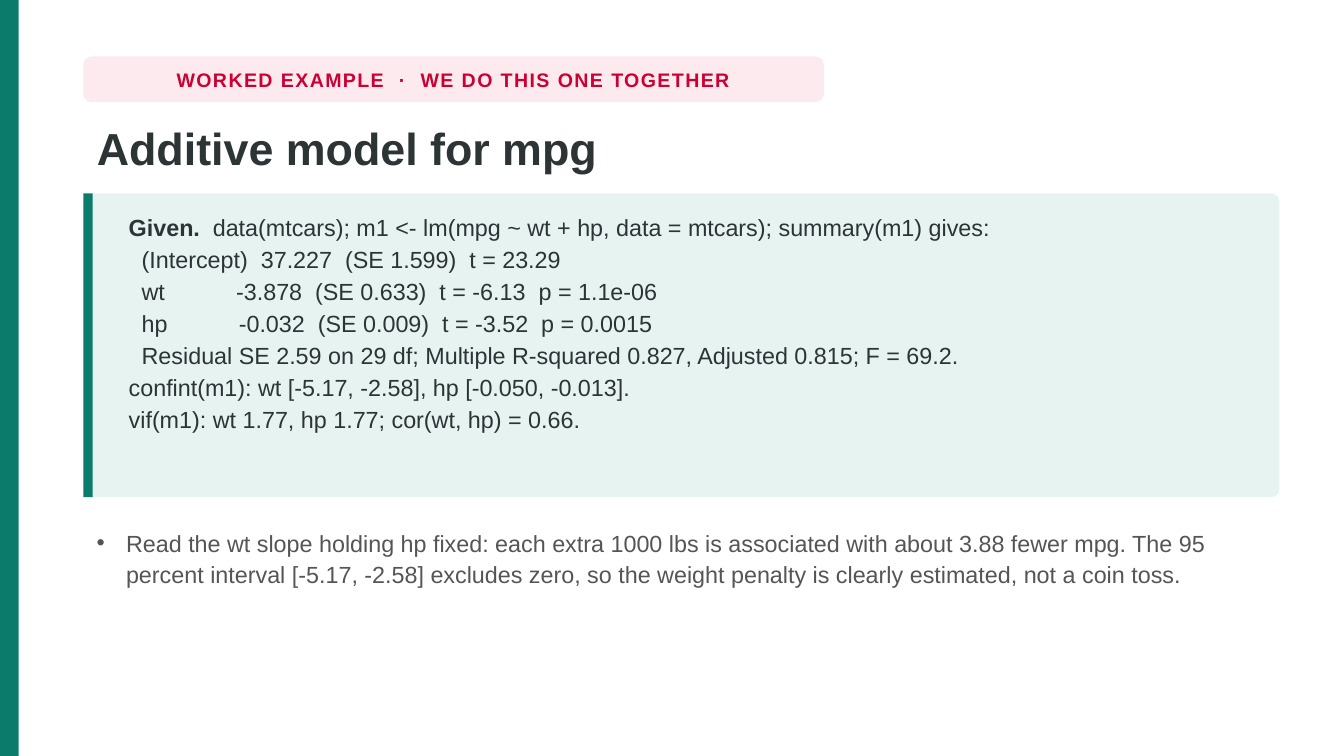
import pptx
import pptx.dml.color
import pptx.enum.shapes
import pptx.enum.text
import pptx.oxml
import pptx.oxml.ns
import pptx.util

SCALE = 4572
FONT = "Arial"
GREEN, MINT = "0B7B6B", "E6F3F0"
PINK, RED = "FDEAEF", "CC0033"
INK, GRAY = "2D3436", "555555"
SLIDE_WIDTH, SLIDE_HEIGHT = 2000, 1125
LEFT, WIDTH = 124, 1780
SHAPES = pptx.enum.shapes.MSO_SHAPE
ANCHORS = pptx.enum.text.MSO_ANCHOR

GIVEN_CODE = """data(mtcars); m1 <- lm(mpg ~ wt + hp, data = mtcars); summary(m1) gives:
  (Intercept)  37.227  (SE 1.599)  t = 23.29
  wt           -3.878  (SE 0.633)  t = -6.13  p = 1.1e-06
  hp           -0.032  (SE 0.009)  t = -3.52  p = 0.0015
  Residual SE 2.59 on 29 df; Multiple R-squared 0.827, Adjusted 0.815; F = 69.2.
confint(m1): wt [-5.17, -2.58], hp [-0.050, -0.013].
vif(m1): wt 1.77, hp 1.77; cor(wt, hp) = 0.66."""


def px(value):
    return pptx.util.Emu(value * SCALE)


def color(value):
    return pptx.dml.color.RGBColor.from_string(value)


def add_block(slide, box, fill, radius=0):
    kind = SHAPES.ROUNDED_RECTANGLE if radius else SHAPES.RECTANGLE
    shape = slide.shapes.add_shape(kind, *map(px, box))
    if radius:
        shape.adjustments[0] = radius / min(box[2:])
    shape.shadow.inherit = False
    shape.fill.solid()
    shape.fill.fore_color.rgb = color(fill)
    shape.line.fill.background()


def add_text_box(slide, box, wrap=True):
    frame = slide.shapes.add_textbox(*map(px, box)).text_frame
    frame.word_wrap = wrap
    return frame


def add_run(paragraph, text, size, fill, bold=False):
    run = paragraph.add_run()
    run.text = text
    run.font.name = FONT
    run.font.size = pptx.util.Pt(size)
    run.font.bold = bold
    run.font.color.rgb = color(fill)
    return run


def add_label(slide, text):
    box = (LEFT, 84, 1102, 68)
    add_block(slide, box, PINK, 12)
    frame = add_text_box(slide, box, False)
    frame.vertical_anchor = ANCHORS.MIDDLE
    paragraph = frame.paragraphs[0]
    paragraph.alignment = pptx.enum.text.PP_ALIGN.CENTER
    run = add_run(paragraph, text, 10.5, RED, True)
    run.font._element.set("spc", "80")


def set_title(slide, text):
    title = slide.shapes.title
    title.left, title.top, title.width, title.height = map(px, (LEFT, 168, WIDTH, 112))
    frame = title.text_frame
    frame.vertical_anchor = ANCHORS.TOP
    frame.auto_size = pptx.enum.text.MSO_AUTO_SIZE.NONE
    paragraph = frame.paragraphs[0]
    paragraph.alignment = pptx.enum.text.PP_ALIGN.LEFT
    paragraph.line_spacing = 1.02
    add_run(paragraph, text, 24, INK, True)


def add_given_panel(slide):
    add_block(slide, (LEFT, 288, WIDTH, 452), MINT, 12)
    add_block(slide, (LEFT, 288, 14, 452), GREEN)
    frame = add_text_box(slide, (172, 302, 1680, 424))
    for index, line in enumerate(GIVEN_CODE.splitlines()):
        paragraph = frame.add_paragraph() if index else frame.paragraphs[0]
        paragraph.line_spacing = 1.14
        if index == 0:
            add_run(paragraph, "Given.  ", 12.5, INK, True)
        add_run(paragraph, line, 12.5, INK)


def add_bullet(slide, text):
    paragraph = add_text_box(slide, (LEFT, 772, WIDTH, 142)).paragraphs[0]
    paragraph.line_spacing = 1.12
    properties = paragraph._p.get_or_add_pPr()
    properties.set("marL", str(px(44)))
    properties.set("indent", str(px(-44)))
    namespace = pptx.oxml.ns.nsdecls("a")
    for element in ('buSzPct {} val="100000"', f'buFont {{}} typeface="{FONT}"', 'buChar {} char="•"'):
        properties.append(pptx.oxml.parse_xml(f"<a:{element.format(namespace)}/>"))
    add_run(paragraph, text, 12.5, GRAY)


def main():
    presentation = pptx.Presentation()
    presentation.slide_width, presentation.slide_height = px(SLIDE_WIDTH), px(SLIDE_HEIGHT)
    slide = presentation.slides.add_slide(presentation.slide_layouts[5])
    add_block(slide, (0, 0, 28, SLIDE_HEIGHT), GREEN)
    add_label(slide, "WORKED EXAMPLE  ·  WE DO THIS ONE TOGETHER")
    set_title(slide, "Additive model for mpg")
    add_given_panel(slide)
    add_bullet(
        slide,
        "Read the wt slope holding hp fixed: each extra 1000 lbs is associated with about 3.88 fewer mpg. "
        "The 95 percent interval [-5.17, -2.58] excludes zero, so the weight penalty is clearly estimated, "
        "not a coin toss.",
    )
    presentation.save("out.pptx")


if __name__ == "__main__":
    main()
